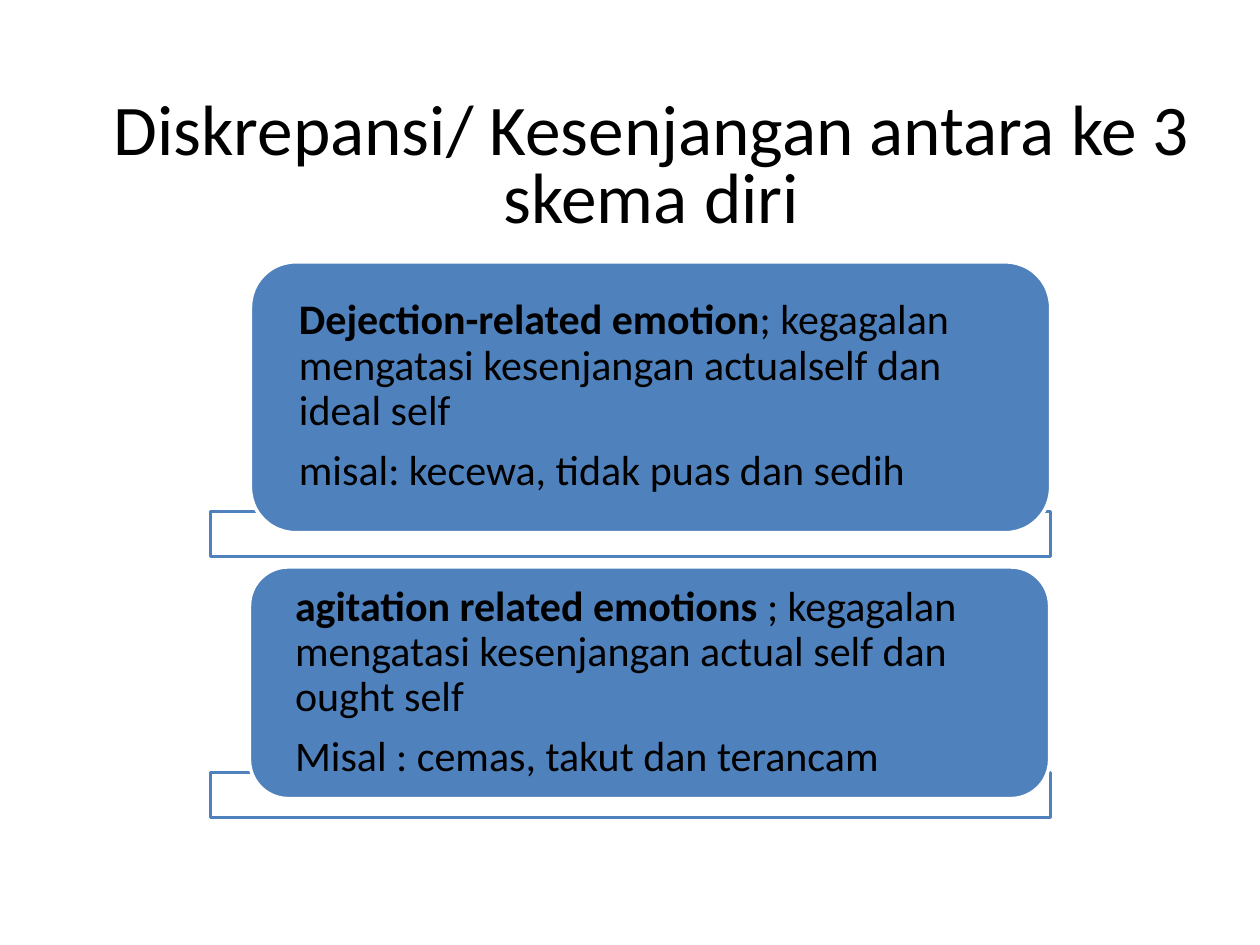
import lxml.etree
import pptx
import pptx.dml.color
import pptx.enum.shapes
import pptx.enum.text
import pptx.oxml.ns
import pptx.util

Cm = pptx.util.Cm
Pt = pptx.util.Pt
RGBColor = pptx.dml.color.RGBColor
MSO_SHAPE = pptx.enum.shapes.MSO_SHAPE
MSO_ANCHOR = pptx.enum.text.MSO_ANCHOR
PP_ALIGN = pptx.enum.text.PP_ALIGN

BLACK = RGBColor(0x00, 0x00, 0x00)
WHITE = RGBColor(0xFF, 0xFF, 0xFF)
BLUE = RGBColor(0x4F, 0x81, 0xBD)
FONT = "Calibri"

# Top and height of bar and card, card left, card insets, then its paragraphs of (text, bold) runs
EMOTIONS = [
    (10.31, 5.05, 5.28, 5.46, (0.71, 0.25, 0.46, 0.28), [
        [("Dejection-related emotion", True),
         ("; kegagalan mengatasi kesenjangan actualself dan ideal self", False)],
        [("misal: kecewa, tidak puas dan sedih", False)],
    ]),
    (15.57, 5.03, 11.43, 4.67, (0.69, 0.23, 0.46, 0.23), [
        [("agitation related emotions ", True),
         ("; kegagalan mengatasi kesenjangan actual self dan ought self", False)],
        [("Misal : cemas, takut dan terancam", False)],
    ]),
]


def add_run(paragraph, text, size, bold=False):
    run = paragraph.add_run()
    run.text = text
    run.font.name = FONT
    run.font.size = Pt(size)
    run.font.bold = bold
    run.font.color.rgb = BLACK


def add_title(slide, text):
    box = slide.shapes.add_textbox(Cm(1.7), Cm(1.9), Cm(22.86), Cm(3.18))
    frame = box.text_frame
    frame.word_wrap = True
    paragraph = frame.paragraphs[0]
    paragraph.alignment = PP_ALIGN.CENTER
    paragraph.line_spacing = 0.8
    add_run(paragraph, text, 40.7)


def add_box(slide, kind, left, top, width, height, fill, line):
    shape = slide.shapes.add_shape(kind, Cm(left), Cm(top), Cm(width), Cm(height))
    shape.shadow.inherit = False
    shape.fill.solid()
    shape.fill.fore_color.rgb = fill
    shape.line.color.rgb = line
    shape.line.width = Pt(2)
    return shape


def add_bar(slide, top):
    """Add the slightly transparent white bar behind a card."""
    bar = add_box(slide, MSO_SHAPE.RECTANGLE, 4.24, top, 16.94, 0.91, WHITE, BLUE)
    color = bar.fill._xPr.find(".//" + pptx.oxml.ns.qn("a:srgbClr"))
    lxml.etree.SubElement(color, pptx.oxml.ns.qn("a:alpha"), val="90000")


def add_card(slide, left, top, height, insets, paragraphs):
    card = add_box(slide, MSO_SHAPE.ROUNDED_RECTANGLE, left, top, 16.13, height, BLUE, WHITE)
    card.adjustments[0] = 0.167
    frame = card.text_frame
    frame.word_wrap = True
    frame.vertical_anchor = MSO_ANCHOR.MIDDLE
    (frame.margin_left, frame.margin_top,
     frame.margin_right, frame.margin_bottom) = map(Cm, insets)
    for index, runs in enumerate(paragraphs):
        paragraph = frame.add_paragraph() if index else frame.paragraphs[0]
        paragraph.alignment = PP_ALIGN.LEFT
        paragraph.line_spacing = 0.9
        paragraph.space_after = Pt(8.4)
        for text, bold in runs:
            add_run(paragraph, text, 24, bold)


def main():
    presentation = pptx.Presentation()
    presentation.slide_width = Cm(25.4)
    presentation.slide_height = Cm(19.05)
    slide = presentation.slides.add_slide(presentation.slide_layouts[6])
    add_title(slide, "Diskrepansi/ Kesenjangan antara ke 3 skema diri")
    for bar_top, card_left, card_top, card_height, insets, paragraphs in EMOTIONS:
        add_bar(slide, bar_top)
        add_card(slide, card_left, card_top, card_height, insets, paragraphs)
    presentation.save("out.pptx")


if __name__ == "__main__":
    main()
